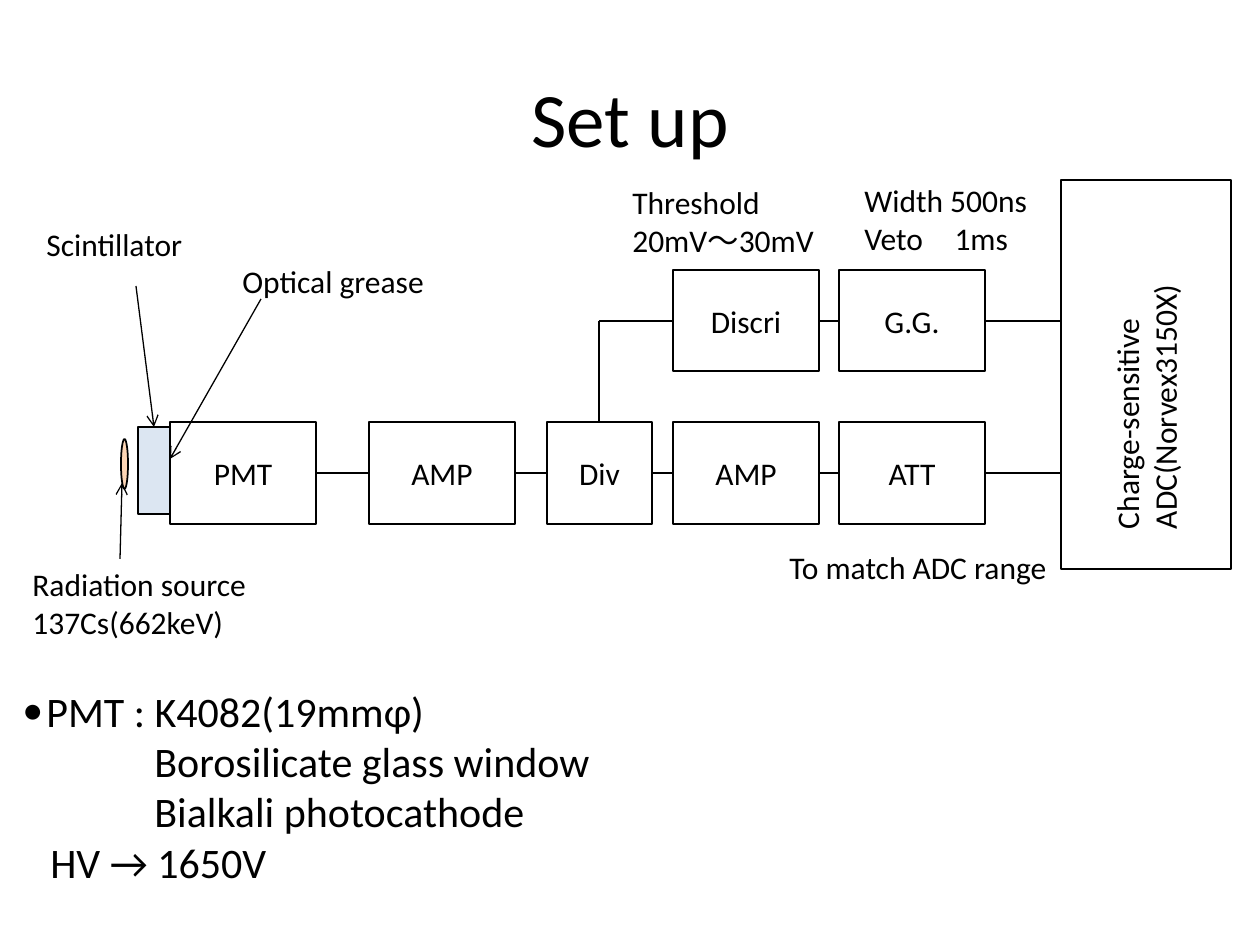
"""Build the detector set-up slide: signal chain, labels and tube details."""
from lxml.etree import SubElement
from pptx import Presentation
from pptx.dml.color import RGBColor
from pptx.enum.shapes import MSO_CONNECTOR, MSO_SHAPE
from pptx.enum.text import MSO_ANCHOR as Anchor, MSO_AUTO_SIZE as AutoSize, PP_ALIGN as Align
from pptx.oxml.ns import qn
from pptx.util import Inches, Pt

PX = 7257
BLACK = RGBColor(0x00, 0x00, 0x00)
PALE_BLUE = RGBColor(0xDC, 0xE6, 0xF2)
PEACH = RGBColor(0xFC, 0xD5, 0xB5)


def write(frame, lines, size=18, align=Align.LEFT, anchor=Anchor.TOP):
    frame.word_wrap = True
    frame.vertical_anchor = anchor
    for index, line in enumerate(lines):
        paragraph = frame.paragraphs[0] if index == 0 else frame.add_paragraph()
        paragraph.alignment = align
        run = paragraph.add_run()
        run.text = line
        run.font.name = "Calibri"
        run.font.size = Pt(size)
        run.font.color.rgb = BLACK


deck = Presentation()
deck.slide_width, deck.slide_height = Inches(10), Inches(7.5)
slide = deck.slides.add_slide(deck.slide_layouts[5])
shapes = slide.shapes

title = shapes.title
title.left, title.top, title.width, title.height = 63 * PX, 38 * PX, 1134 * PX, 158 * PX
write(title.text_frame, ["Set up"], size=44, align=Align.CENTER, anchor=Anchor.MIDDLE)

LOWER, UPPER, MODULE = 422, 270, 146
modules = [
    ("PMT", 170, LOWER, MODULE, 102, None),
    ("", 138, 427, 32, 87, PALE_BLUE),
    ("", 121, 439, 7, 50, PEACH),
    ("AMP", 369, LOWER, MODULE, 102, None),
    ("Div", 547, LOWER, 105, 102, None),
    ("AMP", 673, LOWER, MODULE, 102, None),
    ("ATT", 839, LOWER, MODULE, 102, None),
    ("", 1061, 180, 170, 389, None),
    ("Discri", 673, UPPER, MODULE, 101, None),
    ("G.G.", 839, UPPER, MODULE, 101, None),
]
for name, left, top, width, height, colour in modules:
    outline = MSO_SHAPE.OVAL if colour == PEACH else MSO_SHAPE.RECTANGLE
    module = shapes.add_shape(outline, left * PX, top * PX, width * PX, height * PX)
    module.shadow.inherit = False
    module.line.color.rgb = BLACK
    module.line.width = Pt(1)
    if colour:
        module.fill.solid()
        module.fill.fore_color.rgb = colour
    else:
        module.fill.background()
    if name:
        write(module.text_frame, [name], align=Align.CENTER, anchor=Anchor.MIDDLE)

SIGNAL, GATE = 473, 321
wires = [(start, SIGNAL, end, SIGNAL, False)
         for start, end in [(316, 369), (515, 547), (652, 673), (819, 839), (985, 1061)]]
wires += [(start, GATE, end, GATE, False)
          for start, end in [(599, 673), (819, 839), (985, 1061)]]
wires += [
    (599, LOWER, 599, GATE, False),
    (136, 286, 154, 427, True),
    (120, 559, 122, 483, True),
    (261, 299, 170, 459, True),
]
for x1, y1, x2, y2, pointed in wires:
    wire = shapes.add_connector(MSO_CONNECTOR.STRAIGHT, x1 * PX, y1 * PX, x2 * PX, y2 * PX)
    wire.line.color.rgb = BLACK
    wire.line.width = Pt(0.75)
    if pointed:
        SubElement(wire._element.spPr.find(qn("a:ln")), qn("a:tailEnd"), type="arrow")
    SubElement(wire._element.spPr, qn("a:effectLst"))

labels = [
    (["Scintillator"], 34, 219, 268, 50, 0),
    (["Radiation source 137Cs(662keV)"], 20, 559, 261, 88, 0),
    (["Charge-sensitive ADC(Norvex3150X)"], 968, 320, 355, 88, 270),
    (["Width 500ns", "Veto　1ms"], 852, 175, 200, 88, 0),
    (["Optical grease"], 230, 256, 231, 50, 0),
    (["Threshold", "20mV～30mV"], 620, 177, 266, 88, 0),
    (["To match ADC range"], 777, 542, 286, 88, 0),
]
for lines, left, top, width, height, turn in labels:
    label = shapes.add_textbox(left * PX, top * PX, width * PX, height * PX)
    label.rotation = turn
    write(label.text_frame, lines)
    label.text_frame.auto_size = AutoSize.SHAPE_TO_FIT_TEXT

details = shapes.add_textbox(10 * PX, 679 * PX, 620 * PX, 214 * PX)
write(details.text_frame, [
    "PMT : K4082(19mmφ)",
    "Borosilicate glass window",
    "Bialkali photocathode",
    "HV → 1650V",
], size=24)
details.text_frame.auto_size = AutoSize.SHAPE_TO_FIT_TEXT
for paragraph, indent in zip(details.text_frame.paragraphs, [24, 132, 132, 28]):
    paragraph._p.get_or_add_pPr().set("marL", str(indent * PX))
bulleted = details.text_frame.paragraphs[0]._p.get_or_add_pPr()
bulleted.set("indent", str(-24 * PX))
SubElement(bulleted, qn("a:buFont"), typeface="Calibri")
SubElement(bulleted, qn("a:buChar"), char="•")

deck.save("out.pptx")
